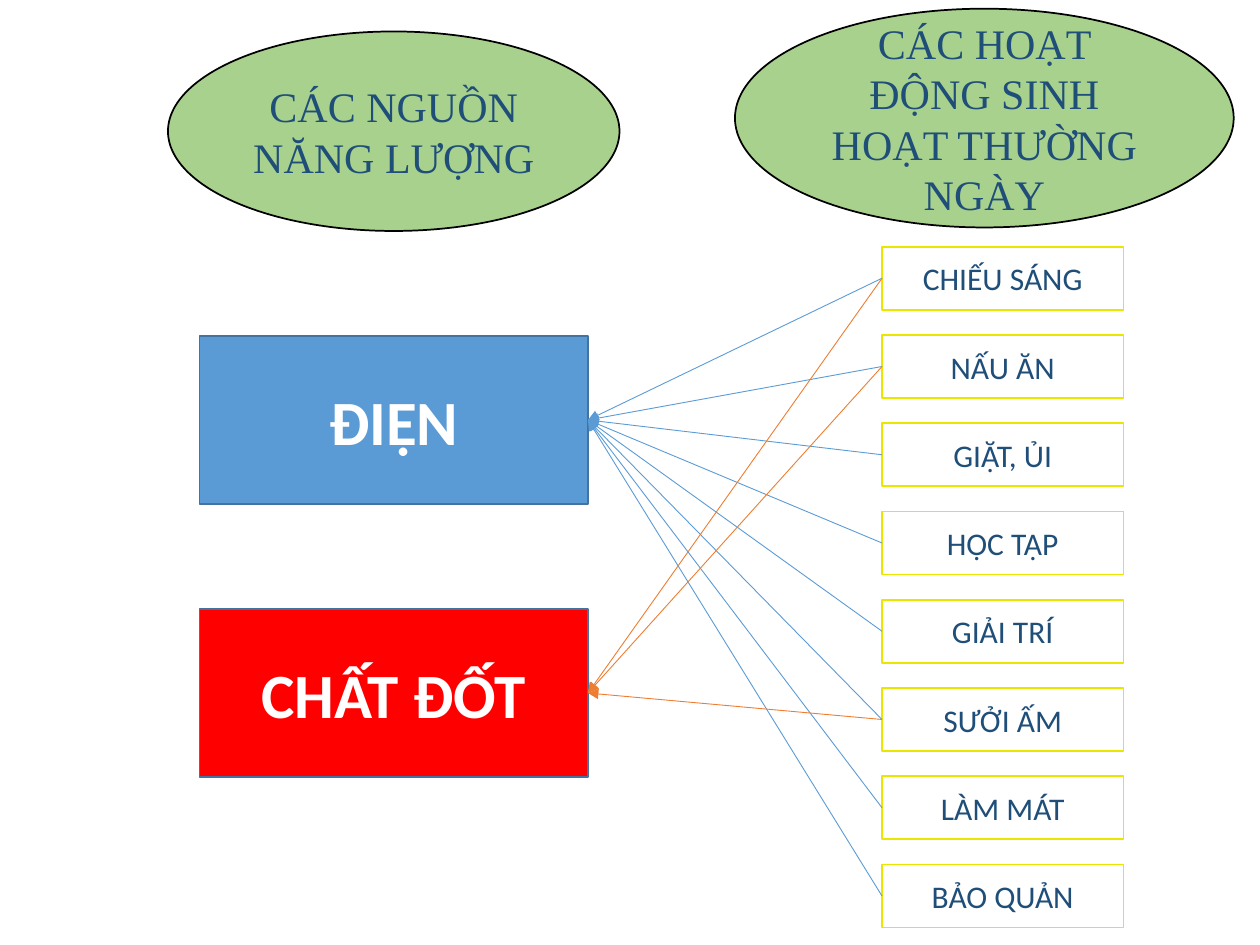
from lxml import etree
from pptx import Presentation
from pptx.dml.color import RGBColor
from pptx.enum import shapes as s, text as t
from pptx.oxml import ns
from pptx.util import Pt

NAVY = "1F4E79"
BLUE = "5B9BD5"
ORANGE = "ED7D31"

TASKS = ["CHIẾU SÁNG", "NẤU ĂN", "GIẶT, ỦI", "HỌC TẬP",
         "GIẢI TRÍ", "SƯỞI ẤM", "LÀM MÁT", "BẢO QUẢN"]


def color(code):
    return RGBColor.from_string(code)


def label(home, kind, box, words, fill, edge, ink, size, face="Calibri", bold=False):
    shape = home.add_shape(kind, *map(Pt, box))
    shape.shadow.inherit = False
    if fill:
        shape.fill.solid()
        shape.fill.fore_color.rgb = color(fill)
    else:
        shape.fill.background()
    shape.line.color.rgb = color(edge)
    shape.line.width = Pt(1)
    frame = shape.text_frame
    frame.word_wrap = True
    frame.vertical_anchor = t.MSO_ANCHOR.MIDDLE
    para = frame.paragraphs[0]
    para.alignment = t.PP_ALIGN.CENTER
    run = para.add_run()
    run.text = words
    run.font.name = face
    run.font.size = Pt(size)
    run.font.bold = bold
    run.font.color.rgb = color(ink)
    return shape


def header(slide, box, words):
    label(slide.shapes, s.MSO_SHAPE.OVAL, box, words,
          "A9D18E", "000000", NAVY, 24, "Times New Roman")


def sources(slide, box):
    left, top, width, height = box
    group = slide.shapes.add_group_shape()
    tall = 96
    items = [("ĐIỆN", BLUE), ("CHẤT ĐỐT", "FF0000")]
    step = (height - tall) / (len(items) - 1)
    return [label(group.shapes, s.MSO_SHAPE.RECTANGLE,
                  (left, top + i * step, width, tall),
                  words, fill, "43739E", "FFFFFF", 36, bold=True)
            for i, (words, fill) in enumerate(items)]


def tasks(slide, box):
    left, top, width, height = box
    tall = 36
    step = (height - tall) / (len(TASKS) - 1)
    return [label(slide.shapes, s.MSO_SHAPE.RECTANGLE,
                  (left, top + i * step, width, tall),
                  words, None, "EBE600", NAVY, 18)
            for i, words in enumerate(TASKS)]


def arrow(slide, task, source, code):
    link = slide.shapes.add_connector(s.MSO_CONNECTOR.STRAIGHT, 0, 0, 0, 0)
    link.begin_connect(task, 1)
    link.end_connect(source, 3)
    link.line.color.rgb = color(code)
    link.line.width = Pt(0.5)
    etree.SubElement(link.line._get_or_add_ln(), ns.qn("a:tailEnd"), type="triangle")
    etree.SubElement(link._element.spPr, ns.qn("a:effectLst"))


def main():
    deck = Presentation()
    deck.slide_width, deck.slide_height = Pt(720), Pt(540)
    slide = deck.slides.add_slide(deck.slide_layouts[6])

    power, fuel = sources(slide, (114, 192, 222, 252))
    boxes = tasks(slide, (504, 141, 138, 389))
    header(slide, (96, 18, 258, 114), "CÁC NGUỒN NĂNG LƯỢNG")
    header(slide, (420, 5, 285, 125), "CÁC HOẠT ĐỘNG SINH HOẠT THƯỜNG NGÀY")

    for task in boxes:
        arrow(slide, task, power, BLUE)
    for words in ("CHIẾU SÁNG", "NẤU ĂN", "SƯỞI ẤM"):
        arrow(slide, boxes[TASKS.index(words)], fuel, ORANGE)

    deck.save("out.pptx")


if __name__ == "__main__":
    main()
